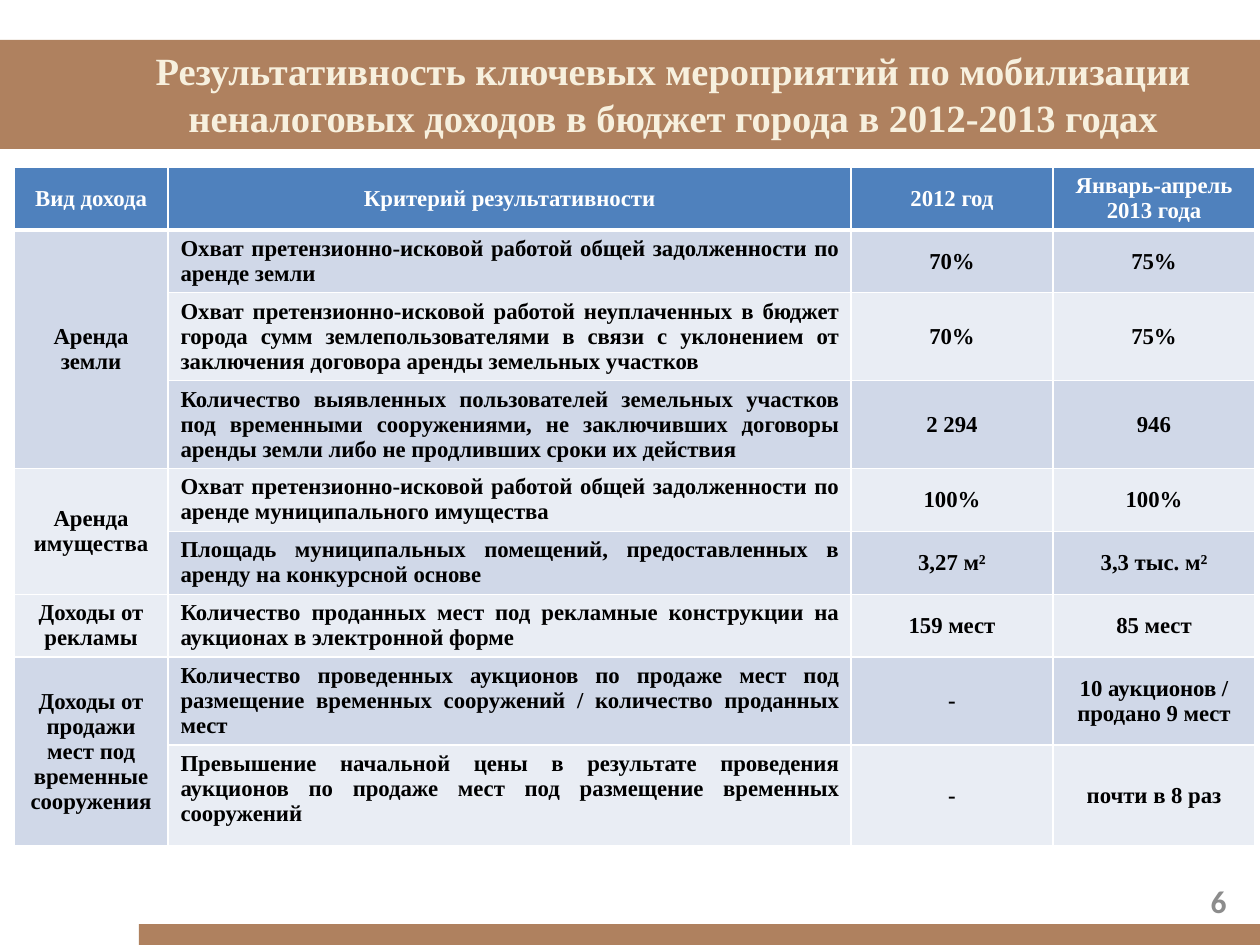
from dataclasses import dataclass

from lxml.etree import SubElement
from pptx import Presentation
from pptx.dml.color import RGBColor
from pptx.enum.shapes import MSO_SHAPE as Shape
from pptx.enum.text import MSO_ANCHOR as Anchor, PP_ALIGN as Align
from pptx.oxml.ns import qn
from pptx.util import Emu, Pt

SCALE = 914400 / 126
SERIF = "Times New Roman"
BROWN, CREAM, GRAY = "AF815F", "F7F0DE", "8C8C8C"
WHITE, BLACK, BLUE = "FFFFFF", "000000", "4F81BD"
BANDS = ("D0D8E8", "E9EDF4")


@dataclass
class Box:
    x: int
    y: int
    w: int
    h: int

    def emu(self) -> list[Emu]:
        return [px(n) for n in (self.x, self.y, self.w, self.h)]


@dataclass
class Style:
    size: int
    color: str
    font: str = SERIF
    align: Align = Align.CENTER
    pitch: float | None = None


@dataclass
class Row:
    height: int
    kind: str
    goal: str
    past: str
    now: str
    span: int = 1


BARS = [Box(139, 924, 1121, 21), Box(0, 40, 1260, 109)]
COLS = [154, 683, 202, 202]
ROWS = [
    Row(63, "Вид дохода", "Критерий результативности", "2012 год", "Январь-апрель\n2013 года"),
    Row(62, "Аренда земли",
        "Охват претензионно-исковой работой общей задолженности по аренде земли",
        "70%", "75%", 3),
    Row(88, "",
        "Охват претензионно-исковой работой неуплаченных в бюджет города сумм "
        "землепользователями в связи с уклонением от заключения договора аренды "
        "земельных участков", "70%", "75%"),
    Row(87, "",
        "Количество выявленных пользователей земельных участков под временными "
        "сооружениями, не заключивших договоры аренды земли либо не продливших "
        "сроки их действия", "2 294", "946"),
    Row(63, "Аренда имущества",
        "Охват претензионно-исковой работой общей задолженности по аренде "
        "муниципального имущества", "100%", "100%", 2),
    Row(63, "",
        "Площадь муниципальных помещений, предоставленных в аренду на конкурсной основе",
        "3,27 м²", "3,3 тыс. м²"),
    Row(62, "Доходы от рекламы",
        "Количество проданных мест под рекламные конструкции на аукционах в "
        "электронной форме", "159 мест", "85 мест"),
    Row(88, "Доходы от\nпродажи мест под временные сооружения",
        "Количество проведенных аукционов по продаже мест под размещение "
        "временных сооружений / количество проданных мест",
        "-", "10 аукционов / продано 9 мест", 2),
    Row(101, "",
        "Превышение начальной цены в результате проведения аукционов по продаже "
        "мест под размещение временных сооружений", "-", "почти в 8 раз"),
]


def px(n: int) -> Emu:
    return Emu(round(n * SCALE))


def rgb(code: str) -> RGBColor:
    return RGBColor.from_string(code)


def write(frame, text: str, style: Style) -> None:
    frame.word_wrap = True
    for i, line in enumerate(text.split("\n")):
        para = frame.paragraphs[0] if i == 0 else frame.add_paragraph()
        para.alignment = style.align
        para.space_before = Pt(0)
        if style.pitch:
            para.line_spacing = Pt(style.pitch)
        run = para.add_run()
        run.text = line
        font = run.font
        font.name, font.size, font.bold = style.font, Pt(style.size), True
        font.color.rgb = rgb(style.color)


def draw_bar(slide, box: Box) -> None:
    bar = slide.shapes.add_shape(Shape.RECTANGLE, *box.emu())
    bar.shadow.inherit = False
    bar.fill.solid()
    bar.fill.fore_color.rgb = rgb(BROWN)
    bar.line.fill.background()


def draw_edges(cell, top: int, foot: int) -> None:
    props = cell._tc.get_or_add_tcPr()
    for side, width in zip("LRTB", (1, 1, top, foot)):
        line = SubElement(props, qn(f"a:ln{side}"), w=str(Pt(width)))
        fill = SubElement(line, qn("a:solidFill"))
        SubElement(fill, qn("a:srgbClr"), val=WHITE)


def draw_cell(cell, text: str, row: int, col: int) -> None:
    draw_edges(cell, 3 if row == 1 else 1, 3 if row == 0 else 1)
    cell.fill.solid()
    cell.fill.fore_color.rgb = rgb(BANDS[(row - 1) % 2] if row else BLUE)
    goal = row > 0 and col == 1
    cell.vertical_anchor = Anchor.TOP if goal else Anchor.MIDDLE
    if text:
        align = Align.JUSTIFY if goal else Align.CENTER
        color = BLACK if row else WHITE
        write(cell.text_frame, text, Style(13, color, align=align, pitch=14.3))


def draw_table(slide) -> None:
    box = Box(14, 167, sum(COLS), sum(row.height for row in ROWS))
    table = slide.shapes.add_table(len(ROWS), len(COLS), *box.emu()).table
    for col, width in zip(table.columns, COLS):
        col.width = px(width)
    for r, row in enumerate(ROWS):
        table.rows[r].height = px(row.height)
        for c, text in enumerate((row.kind, row.goal, row.past, row.now)):
            draw_cell(table.cell(r, c), text, r, c)
        if row.span > 1:
            table.cell(r, 0).merge(table.cell(r + row.span - 1, 0))


def draw_title(slide) -> None:
    title = slide.shapes.title
    slide.shapes._spTree.append(title._element)
    title.left, title.top, title.width, title.height = Box(105, 39, 1136, 108).emu()
    title.text_frame.vertical_anchor = Anchor.MIDDLE
    write(title.text_frame,
          "Результативность ключевых мероприятий по мобилизации "
          "неналоговых доходов в бюджет города в 2012-2013 годах",
          Style(22, CREAM, pitch=26.9))


def draw_page(slide) -> None:
    note = slide.shapes.add_textbox(*Box(945, 876, 294, 50).emu())
    note.text_frame.vertical_anchor = Anchor.MIDDLE
    write(note.text_frame, "6", Style(18, GRAY, "Calibri", Align.RIGHT))


def main() -> None:
    deck = Presentation()
    deck.slide_width, deck.slide_height = px(1260), px(945)
    slide = deck.slides.add_slide(deck.slide_layouts[5])
    for bar in BARS:
        draw_bar(slide, bar)
    draw_title(slide)
    draw_page(slide)
    draw_table(slide)
    deck.save("out.pptx")


if __name__ == "__main__":
    main()
